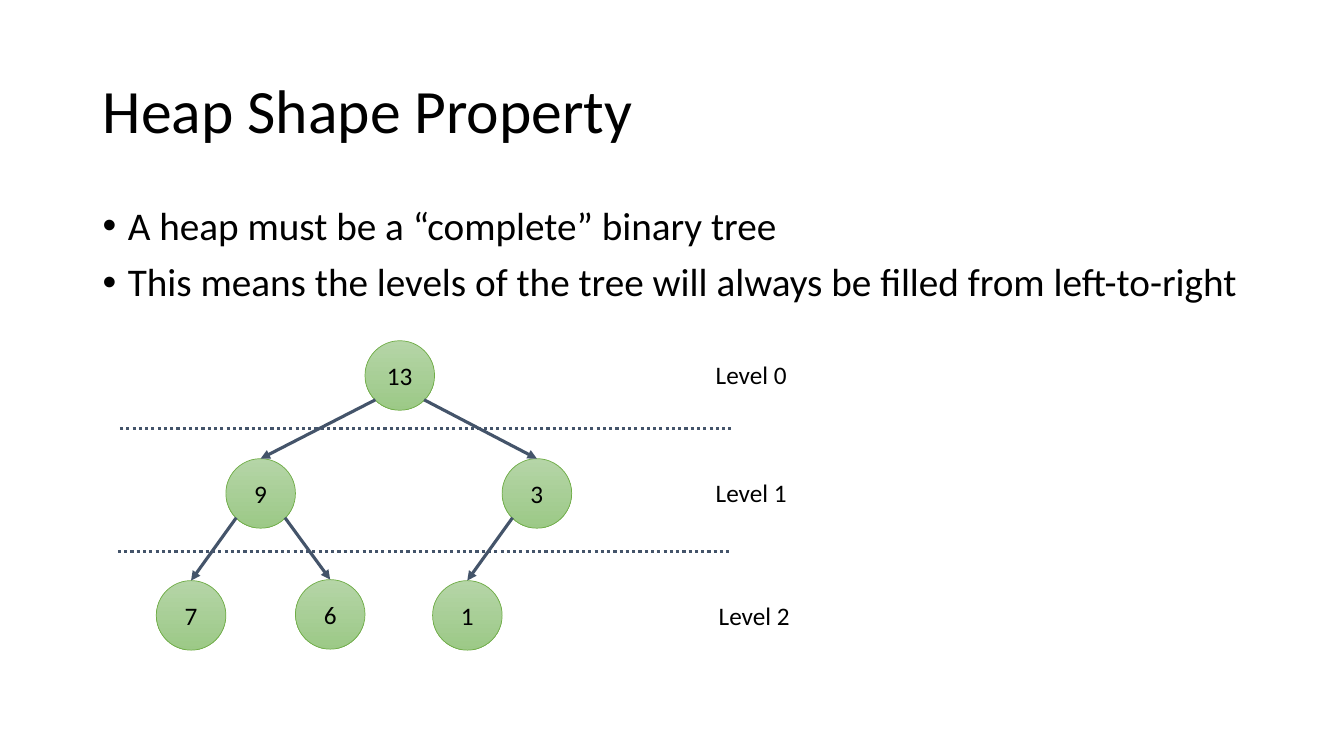
"""Build a slide that shows the shape property of a heap."""
from lxml import etree
from pptx import Presentation
from pptx.dml.color import RGBColor
from pptx.enum.dml import MSO_LINE
from pptx.enum.shapes import MSO_CONNECTOR, MSO_SHAPE
from pptx.enum.text import MSO_ANCHOR, MSO_AUTO_SIZE, PP_ALIGN
from pptx.oxml.ns import qn
from pptx.util import Inches, Pt

STRAIGHT = MSO_CONNECTOR.STRAIGHT
OVAL = MSO_SHAPE.OVAL
DOTTED = MSO_LINE.ROUND_DOT
MIDDLE, TOP = MSO_ANCHOR.MIDDLE, MSO_ANCHOR.TOP
LEFT, CENTER = PP_ALIGN.LEFT, PP_ALIGN.CENTER
COLORS = {"text": "000000", "line": "44546A", "border": "70AD47",
          "node_top": "B5D5A7", "node_bottom": "9CC987"}
D = 0.69


def write(sp, *lines, size=18, align=LEFT, anchor=TOP, wrap=True,
          spacing=None, before=0, bullet=False):
    tf = sp.text_frame
    tf.word_wrap = wrap
    tf.auto_size = MSO_AUTO_SIZE.NONE if wrap else MSO_AUTO_SIZE.SHAPE_TO_FIT_TEXT
    tf.vertical_anchor = anchor
    for i, line in enumerate(lines):
        p = tf.add_paragraph() if i else tf.paragraphs[0]
        p.alignment = align
        p.line_spacing = spacing
        p.space_before = Pt(before)
        r = p.add_run()
        r.text = line
        r.font.size = Pt(size)
        r.font.name = "Calibri"
        r.font.color.rgb = RGBColor.from_string(COLORS["text"])
        if bullet:
            pPr = p._p.get_or_add_pPr()
            pPr.set("marL", str(Inches(0.25)))
            pPr.set("indent", str(Inches(-0.25)))
            etree.SubElement(pPr, qn("a:buFont")).set("typeface", "Arial")
            etree.SubElement(pPr, qn("a:buChar")).set("char", "•")


def add_line(x1, y1, x2, y2):
    cxn = s.shapes.add_connector(STRAIGHT, Inches(x1), Inches(y1), Inches(x2), Inches(y2))
    cxn.line.color.rgb = RGBColor.from_string(COLORS["line"])
    cxn.line.width = Pt(2.25)
    etree.SubElement(cxn._element.spPr, qn("a:effectLst"))
    return cxn


prs = Presentation()
prs.slide_width, prs.slide_height = Inches(13.33), Inches(7.5)
s = prs.slides.add_slide(prs.slide_layouts[5])

title = s.shapes.title
title.left, title.top = Inches(0.92), Inches(0.4)
title.width, title.height = Inches(11.5), Inches(1.45)
write(title, "Heap Shape Property", size=44, anchor=MIDDLE, spacing=0.9)

body = s.shapes.add_textbox(Inches(0.92), Inches(2), Inches(11.5), Inches(4.76))
write(body, "A heap must be a “complete” binary tree",
      "This means the levels of the tree will always be filled from left-to-right",
      size=28, spacing=0.9, before=10, bullet=True)

positions = {"13": (3.62, 3.38), "9": (2.24, 4.55), "3": (4.98, 4.55),
             "7": (1.55, 5.76), "1": (4.29, 5.76), "6": (2.93, 5.75)}
nodes = {}
for value, (x, y) in positions.items():
    sp = s.shapes.add_shape(OVAL, Inches(x), Inches(y), Inches(D), Inches(D))
    sp.shadow.inherit = False
    sp.fill.gradient()
    sp.fill.gradient_angle = 270
    for stop, name in zip(sp.fill.gradient_stops, ("node_top", "node_bottom")):
        stop.color.rgb = RGBColor.from_string(COLORS[name])
    for stop, place in zip(sp.fill.gradient_stops, (0, 1)):
        stop.position = place
    sp.line.color.rgb = RGBColor.from_string(COLORS["border"])
    sp.line.width = Pt(0.5)
    write(sp, value, align=CENTER, anchor=MIDDLE)
    nodes[value] = sp

edges = [("13", "9"), ("13", "3"), ("9", "7"), ("3", "1"), ("9", "6")]
for parent, child in edges:
    px, py = positions[parent]
    cx, cy = positions[child]
    side = 0.15 if cx < px else 0.85
    cxn = add_line(px + side * D, py + 0.85 * D, cx + D / 2, cy)
    cxn.end_connect(nodes[child], 0)
    etree.SubElement(cxn.line._get_or_add_ln(), qn("a:tailEnd")).set("type", "triangle")

for x, y in [(1.19, 4.25), (1.17, 5.47)]:
    add_line(x, y, x + 6.07, y).line.dash_style = DOTTED

for level, (x, y) in enumerate([(7, 3.52), (7, 4.69), (7.03, 5.91)]):
    label = s.shapes.add_textbox(Inches(x), Inches(y), Inches(0.92), Inches(0.4))
    write(label, f"Level {level}", wrap=False)

prs.save("out.pptx")
